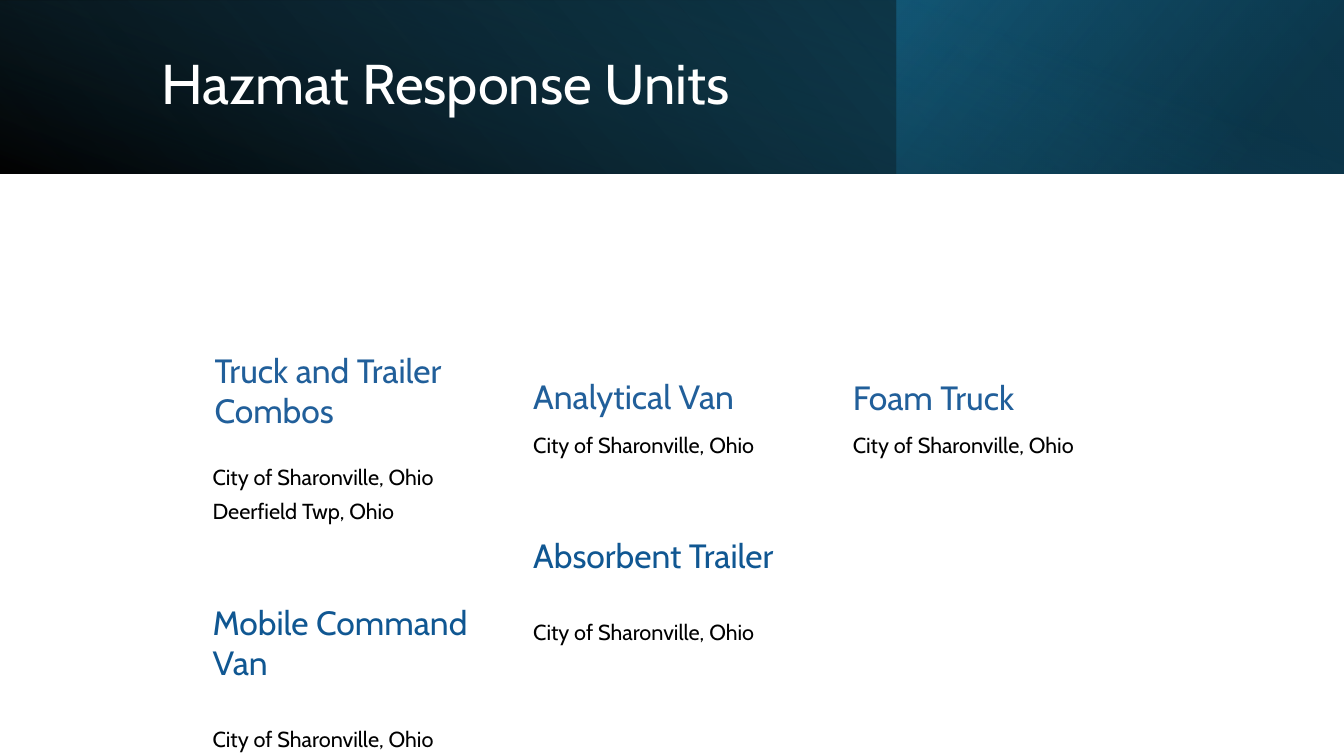
from pptx import Presentation
from pptx.dml.color import RGBColor
from pptx.enum import shapes, text
from pptx.oxml import ns
from pptx.util import Inches, Pt
from lxml import etree


def rgb(value):
    return RGBColor.from_string(value)


def add_text(box, lines, anchor=text.MSO_ANCHOR.TOP):
    """Fill a text box at (left, top, width, height) with (text, size, colour, space before)."""
    frame = slide.shapes.add_textbox(*map(Inches, box)).text_frame
    frame.word_wrap = True
    frame.vertical_anchor = anchor
    frame.text = "\n".join(line[0] for line in lines)
    for paragraph, (_, size, colour, before) in zip(frame.paragraphs, lines):
        paragraph.space_before = Pt(before)
        paragraph.space_after = Pt(6)
        font = paragraph.runs[0].font
        font.name, font.size, font.color.rgb = "Cabin", Pt(size), rgb(colour)
    return frame


prs = Presentation()
prs.slide_width, prs.slide_height = Inches(13.33), Inches(7.5)
slide = prs.slides.add_slide(prs.slide_layouts[6])

# Header band: three layered gradients, stops as (position %, colour, opacity %)
layers = [
    ((0, 0, 13.33, 1.72), 0, True, 140, [(0, "000000", 96), (100, "104862", 100)]),
    ((8.89, 0, 4.44, 1.72), 180, False, 320, [(19, "0B3041", 68), (100, "156082", 79)]),
    ((5.8, -5.8, 1.72, 13.33), 90, False, 340, [(23, "156082", 0), (99, "000000", 74)]),
]
for box, rotation, flipped, angle, stops in layers:
    band = slide.shapes.add_shape(shapes.MSO_SHAPE.RECTANGLE, *map(Inches, box))
    band.shadow.inherit = False
    band.line.fill.background()
    band.rotation = rotation
    if flipped:
        band._element.spPr.find(ns.qn("a:xfrm")).set("flipH", "1")
    band.fill.gradient()
    band.fill.gradient_angle = angle
    for stop, (position, colour, opacity) in zip(band.fill.gradient_stops, stops):
        stop.position = position / 100
        stop.color.rgb = rgb(colour)
    colours = band._element.spPr.iter(ns.qn("a:srgbClr"))
    for colour_element, (_, _, opacity) in zip(colours, stops):
        alpha = etree.SubElement(colour_element, ns.qn("a:alpha"))
        alpha.set("val", str(opacity * 1000))

# Title
title = add_text((1.5, 0.38, 10.98, 0.96), [("Hazmat Response Units", 40, "FFFFFF", 0)],
                 text.MSO_ANCHOR.MIDDLE)
title.paragraphs[0].line_spacing = 0.9
title.paragraphs[0].space_after = Pt(0)

# Unit headings
headings = [
    ((2.03, 3.42, 2.94, 0.82), "Truck and Trailer Combos"),
    ((5.19, 3.68, 2.96, 0.54), "Analytical Van"),
    ((8.36, 3.69, 2.97, 0.54), "Foam Truck"),
]
for box, heading in headings:
    add_text(box, [(heading, 24, "215F9A", 0)])

# Locations, with the second unit of a column below them
sharonville = "City of Sharonville, Ohio"
gap = 24.8  # one body line with its spacing
columns = [
    ((2.01, 4.55, 2.96, 2.35), [sharonville, "Deerfield Twp, Ohio"], "Mobile Command Van"),
    ((5.19, 4.23, 2.96, 2.67), [sharonville], "Absorbent Trailer"),
    ((8.36, 4.23, 2.65, 0.54), [sharonville], None),
]
for box, locations, second_unit in columns:
    lines = [(location, 15.5, "000000", 0) for location in locations]
    if second_unit:
        lines.append((second_unit, 24, "105792", 2 * gap))
        lines.append((sharonville, 15.5, "000000", gap))
    add_text(box, lines)

prs.save("out.pptx")
